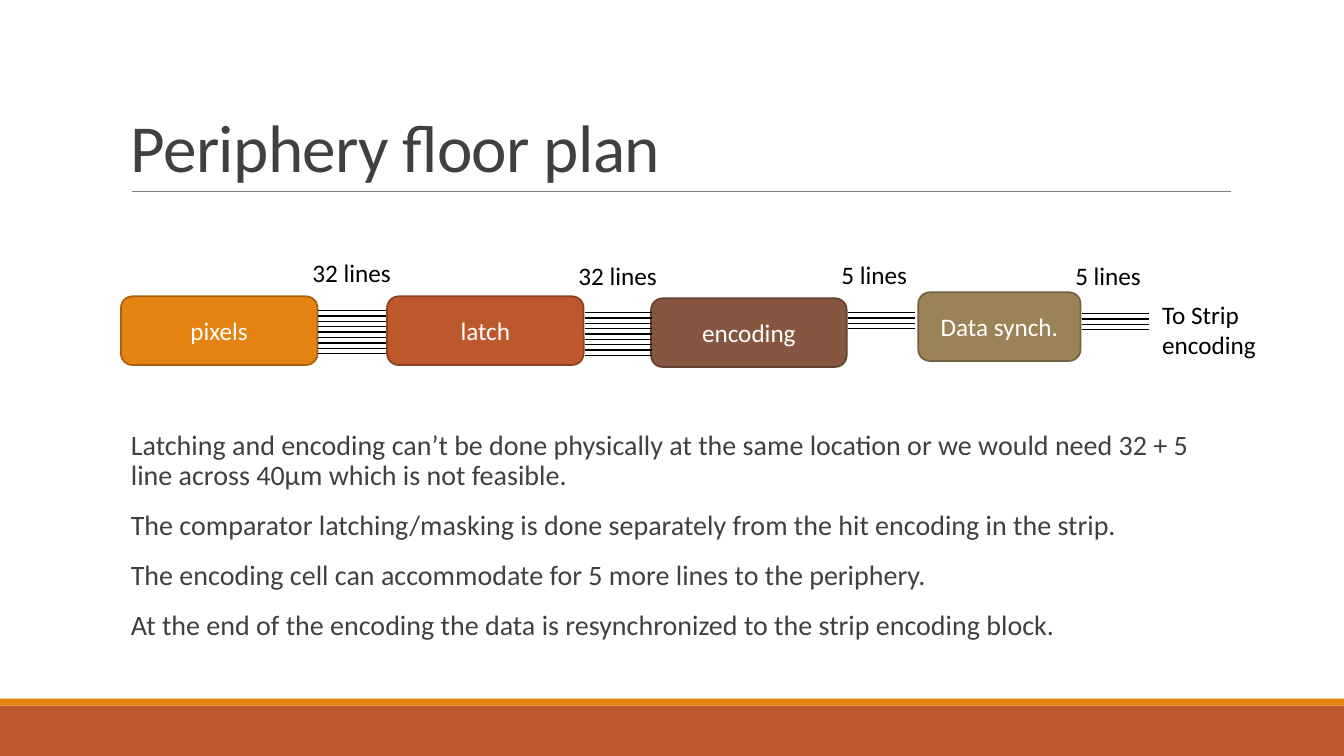
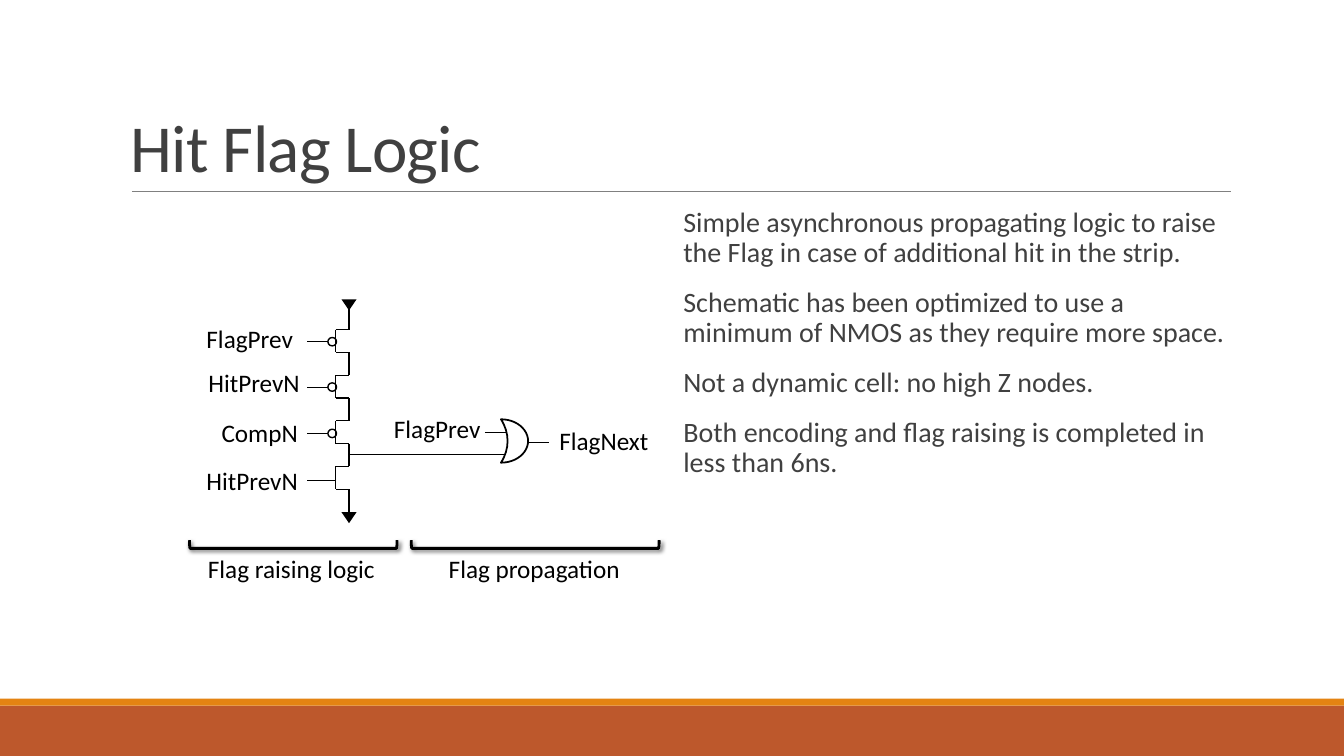
"""Build two slides on the periphery floor plan and the hit flag logic."""
from lxml import etree
from pptx import Presentation
from pptx.dml.color import RGBColor
from pptx.enum import shapes, text
from pptx.oxml.ns import qn
from pptx.util import Pt

FONT = "Calibri"
RUST, ORANGE, GREY, DARK, BLACK, WHITE = "BD582C", "E48312", "808080", "404040", "000000", "FFFFFF"
KIND, ALIGN, ANCHOR = shapes.MSO_SHAPE, text.PP_ALIGN, text.MSO_ANCHOR
rgb = RGBColor.from_string


def box(s, x, y, w, h, words="", size=18, color=BLACK, kind=None, fill=None, line=None,
        width=1, align=ALIGN.LEFT, anchor=ANCHOR.TOP, wrap=False):
    """Add a preset shape, or a text box when no kind is given."""
    at = Pt(x), Pt(y), Pt(w), Pt(h)
    if kind is None:
        sp = s.shapes.add_textbox(*at)
    else:
        sp = s.shapes.add_shape(kind, *at)
        sp.shadow.inherit = False
        if fill:
            sp.fill.solid()
            sp.fill.fore_color.rgb = rgb(fill)
        else:
            sp.fill.background()
        if line:
            sp.line.color.rgb = rgb(line)
            sp.line.width = Pt(width)
        else:
            sp.line.fill.background()
    if words:
        tf = sp.text_frame
        tf.text = words
        tf.word_wrap = wrap
        tf.vertical_anchor = anchor
        for p in tf.paragraphs:
            p.alignment = align
            for r in p.runs:
                r.font.name = FONT
                r.font.size = Pt(size)
                r.font.color.rgb = rgb(color)
    return sp


def wire(s, x1, y1, x2, y2, width=0.75, color=BLACK):
    """Add a straight line without a shadow."""
    c = s.shapes.add_connector(shapes.MSO_CONNECTOR.STRAIGHT, Pt(x1), Pt(y1), Pt(x2), Pt(y2))
    c.line.color.rgb = rgb(color)
    c.line.width = Pt(width)
    etree.SubElement(c._element.spPr, qn("a:effectLst"))


prs = Presentation()
prs.slide_width, prs.slide_height = Pt(960), Pt(540)

pages = [
    ("Periphery floor plan", (86.4, 304.6, 792, 157.7), [
        "Latching and encoding can’t be done physically at the same location or we would need "
        "32 + 5 line across 40µm which is not feasible.",
        "The comparator latching/masking is done separately from the hit encoding in the strip.",
        "The encoding cell can accommodate for 5 more lines to the periphery.",
        "At the end of the encoding the data is resynchronized to the strip encoding block."]),
    ("Hit Flag Logic", (481, 145.4, 397.4, 316.8), [
        "Simple asynchronous propagating logic to raise the Flag in case of additional hit "
        "in the strip.",
        "Schematic has been optimized to use a minimum of NMOS as they require more space.",
        "Not a dynamic cell: no high Z nodes.",
        "Both encoding and flag raising is completed in less than 6ns."]),
]
for title, body_at, points in pages:
    s = prs.slides.add_slide(prs.slide_layouts[6])
    box(s, 0, 504, 960, 36, kind=KIND.RECTANGLE, fill=RUST)
    box(s, 0, 499, 960, 5, kind=KIND.RECTANGLE, fill=ORANGE)
    wire(s, 94.3, 136.8, 879.1, 136.8, 0.5, GREY)
    sp = box(s, 86.4, 22.3, 792, 114.5, title, 48, DARK, anchor=ANCHOR.BOTTOM, wrap=True)
    p = sp.text_frame.paragraphs[0]
    p.line_spacing = 0.85
    p.runs[0]._r.get_or_add_rPr().set("spc", "-50")
    tf = box(s, *body_at, "\n".join(points), 20, DARK, wrap=True).text_frame
    tf.margin_right = 0
    for i, p in enumerate(tf.paragraphs):
        p.line_spacing = 0.9
        p.space_before = Pt(12 if i else 0)
        p.space_after = Pt(2)

plan, logic = prs.slides

blocks = [
    ("pixels", 86.4, 211.7, 140.4, ORANGE, "A9610D"),
    ("latch", 276.5, 211.7, 140.4, RUST, "8C4121"),
    ("encoding", 465.1, 213.1, 139.7, "865640", "63402F"),
    ("Data synch.", 655.9, 208.8, 115.9, "9B8357", "736140"),
]
for name, x, y, w, fill, edge in blocks:
    box(plan, x, y, w, 49, name, 18, WHITE, KIND.ROUNDED_RECTANGLE, fill, edge, 1.25,
        ALIGN.CENTER, ANCHOR.MIDDLE, True)

buses = [
    ("32 lines", 9, 227.5, 221.8, 216, 180, 71.3),
    ("32 lines", 9, 417.6, 223.2, 406.1, 182.2, 71.3),
    ("5 lines", 4, 605.5, 223.2, 594, 181.4, 61.9),
    ("5 lines", 4, 772.6, 223.9, 761, 182.2, 61.9),
]
for label, count, x, y, label_x, label_y, label_w in buses:
    for i in range(count):
        wire(plan, x, y + 3.85 * i, x + 48.2, y + 3.85 * i, 1)
    box(plan, label_x, label_y, label_w, 28.8, label)
box(plan, 823, 210.2, 82, 51, "To Strip\nencoding")

STACK_Y, PITCH, HEIGHT = 235.4, 32.6, 16.3
GATE_X, CHANNEL_X, RAIL_X = 219.4, 240, 249.3
inputs = [
    ("FlagPrev", 140.4, 227.5, 77, 244.1, True),
    ("HitPrevN", 141.8, 258.5, 80.6, 276.5, True),
    ("CompN", 151.2, 294.5, 69.8, 309.6, True),
    ("HitPrevN", 140.4, 329, 80.6, 343.4, False),
]
for i, (name, x, y, w, gate_y, inverted) in enumerate(inputs):
    top = STACK_Y + PITCH * i
    wire(logic, CHANNEL_X, top, CHANNEL_X, top + HEIGHT)
    for end_y in (top, top + HEIGHT):
        wire(logic, CHANNEL_X, end_y, RAIL_X, end_y)
    if inverted:
        box(logic, 234.2, gate_y - 3, 6.2, 6, kind=KIND.OVAL, line=BLACK)
    wire(logic, GATE_X, gate_y, 234.2 if inverted else CHANNEL_X, gate_y)
    box(logic, x, y, w, 28.8, name)
for i in range(len(inputs) + 1):
    y = STACK_Y - HEIGHT + PITCH * i
    wire(logic, RAIL_X, y, RAIL_X, y + HEIGHT)
for y in (213.8, 365.8):
    sp = box(logic, RAIL_X - 5.4, y, 10.8, 7.9, kind=KIND.ISOSCELES_TRIANGLE, fill=BLACK)
    sp.rotation = 180

sp = box(logic, 357.8, 299.5, 19.4, 31, kind=KIND.MOON, line=BLACK, width=1.25)
sp.rotation = 180
sp.adjustments[0] = 0.756
for x1, x2, y in [(RAIL_X, 361.4, 324.7), (346.3, 361.4, 308.9), (377.3, 392.4, 316.1)]:
    wire(logic, x1, y, x2, y)
box(logic, 274.3, 291.6, 77, 28.8, "FlagPrev")
box(logic, 392.4, 300.2, 78.5, 28.8, "FlagNext")

sections = [
    ("Flag raising logic", 209.5, 148.3, 140.4, 135.4),
    ("Flag propagation", 382.3, 177.1, 312.5, 138.2),
]
for name, mid_x, span, x, w in sections:
    sp = box(logic, mid_x - 2.9, 388.8 - span / 2, 5.8, span, kind=KIND.LEFT_BRACKET,
             line=BLACK, width=2)
    sp.rotation = 270
    effects = sp._element.spPr.find(qn("a:effectLst"))
    shadow = etree.SubElement(effects, qn("a:outerShdw"), blurRad=str(Pt(3)), dist=str(Pt(2)),
                              dir="2700000", algn="tl", rotWithShape="0")
    tint = etree.SubElement(shadow, qn("a:srgbClr"), val=BLACK)
    etree.SubElement(tint, qn("a:alpha"), val="60000")
    box(logic, x, 391.7, w, 28.8, name, align=ALIGN.CENTER)

prs.save("out.pptx")
